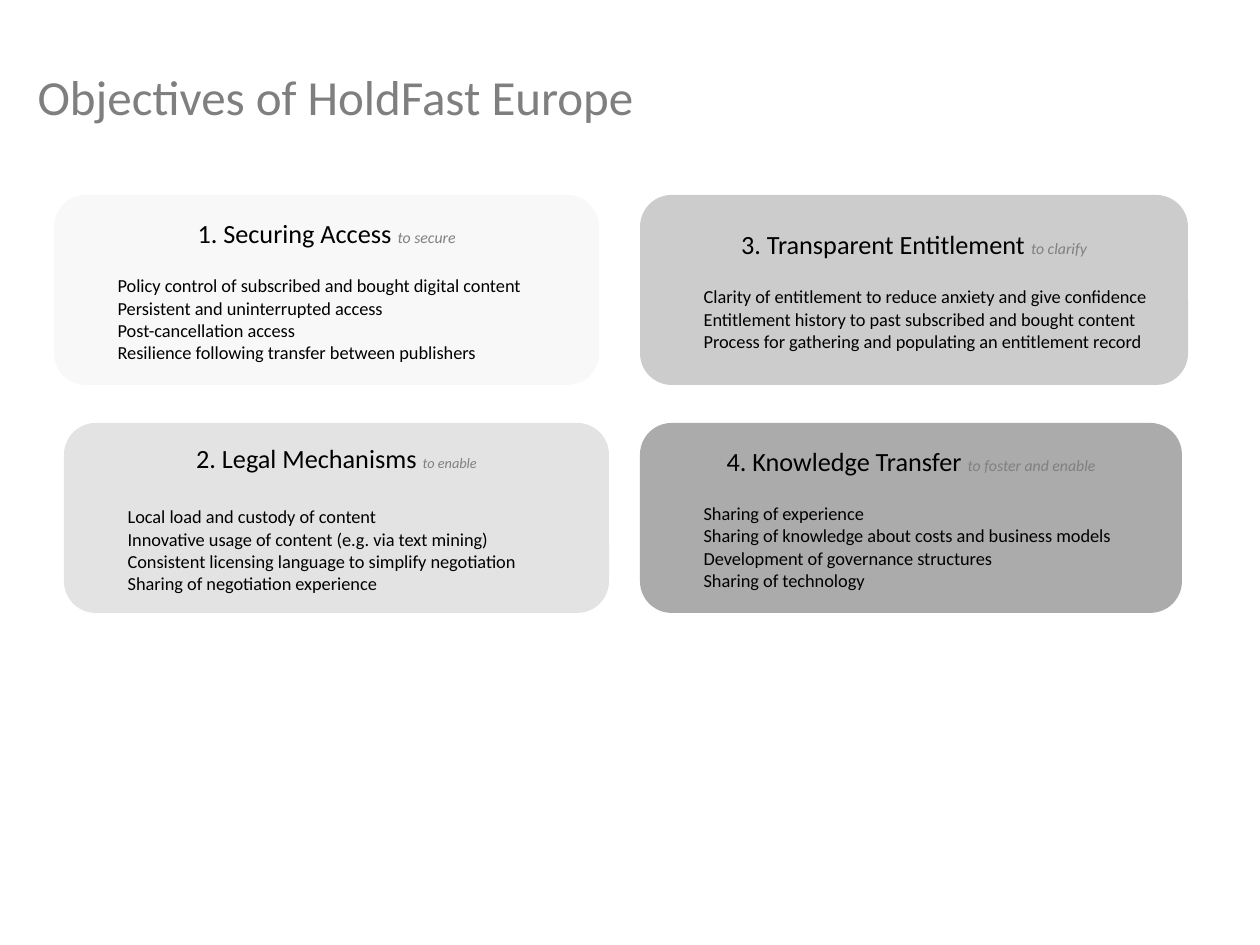
from pptx import Presentation
from pptx import util as u
from pptx.dml.color import RGBColor
from pptx.enum import shapes, text

PX = 914400 / 126
FONT = "Calibri"
COLORS = {"title": "7F7F7F", "head": "000000", "aim": "808080", "item": "000000"}
TITLE = "Objectives of HoldFast Europe"
TOPS, HIGH = (195, 423), 190
INDENT = 42

# row, left, width, fill, heading, aim, aim size, gap below heading, items
GOALS = [
    (0, 54, 545, "F8F8F8", "1. Securing Access", "to secure", 9, 26, [
        "Policy control of subscribed and bought digital content",
        "Persistent and uninterrupted access",
        "Post-cancellation access",
        "Resilience following transfer between publishers"]),
    (1, 64, 545, "E3E3E3", "2. Legal Mechanisms", "to enable", 8.2, 32, [
        "Local load and custody of content",
        "Innovative usage of content (e.g. via text mining)",
        "Consistent licensing language to simplify negotiation",
        "Sharing of negotiation experience"]),
    (0, 640, 548, "CCCCCC", "3. Transparent Entitlement", "to clarify", 9, 26, [
        "Clarity of entitlement to reduce anxiety and give confidence",
        "Entitlement history to past subscribed and bought content",
        "Process for gathering and populating an entitlement record"]),
    (1, 640, 542, "ABABAB", "4. Knowledge Transfer", "to foster and enable", 9, 26, [
        "Sharing of experience",
        "Sharing of knowledge about costs and business models",
        "Development of governance structures",
        "Sharing of technology"]),
]


def px(n):
    return u.Emu(round(n * PX))


def style(font, size, color):
    font.name, font.size = FONT, u.Pt(size)
    font.color.rgb = RGBColor.from_string(COLORS[color])


def add_title(slide):
    title = slide.shapes.title
    title.left, title.top, title.width, title.height = map(px, (25, 37, 1134, 118))
    frame = title.text_frame
    frame.text = TITLE
    frame.vertical_anchor = text.MSO_ANCHOR.MIDDLE
    para = frame.paragraphs[0]
    para.alignment = text.PP_ALIGN.LEFT
    style(para.font, 28, "title")


def add_goal(slide, row, left, width, fill, head, aim, size, gap, items):
    box = slide.shapes.add_shape(
        shapes.MSO_SHAPE.ROUNDED_RECTANGLE, *map(px, (left, TOPS[row], width, HIGH)))
    box.shadow.inherit = False
    box.fill.solid()
    box.fill.fore_color.rgb = RGBColor.from_string(fill)
    box.line.fill.background()
    frame = box.text_frame
    frame.word_wrap = True
    frame.vertical_anchor = text.MSO_ANCHOR.MIDDLE

    para = frame.paragraphs[0]
    para.alignment = text.PP_ALIGN.CENTER
    run = para.add_run()
    run.text = head + " "
    style(run.font, 15, "head")
    run = para.add_run()
    run.text = aim
    style(run.font, size, "aim")
    run.font.italic = True

    for i, item in enumerate(items):
        para = frame.add_paragraph()
        para.text = item
        para.level = 1
        para.alignment = text.PP_ALIGN.LEFT
        para._p.get_or_add_pPr().set("marL", str(px(INDENT)))
        if i == 0:
            para.space_before = px(gap)
        style(para.font, 10.5, "item")


def main():
    deck = Presentation()
    deck.slide_width, deck.slide_height = u.Inches(10), u.Inches(7.5)
    slide = deck.slides.add_slide(deck.slide_layouts[5])
    add_title(slide)
    for goal in GOALS:
        add_goal(slide, *goal)
    deck.save("out.pptx")


if __name__ == "__main__":
    main()
